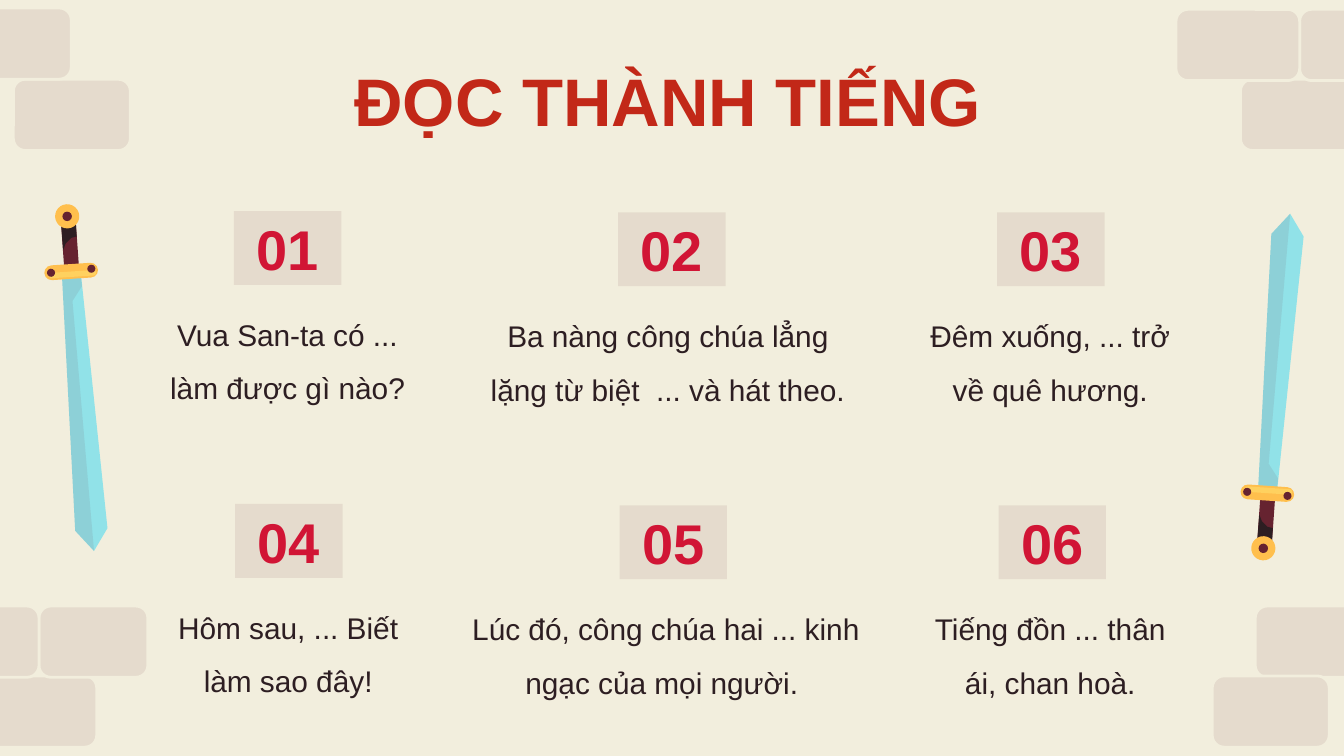
import pptx
import pptx.dml.color
import pptx.enum.shapes
import pptx.enum.text
import pptx.oxml
import pptx.oxml.ns
import pptx.util
from pptx.util import Inches

RGBColor = pptx.dml.color.RGBColor
SHAPE = pptx.enum.shapes.MSO_SHAPE
ANCHOR = pptx.enum.text.MSO_ANCHOR

CREAM = RGBColor(0xF2, 0xEE, 0xDD)
MAROON = RGBColor(0x66, 0x23, 0x30)
DARK = RGBColor(0x2D, 0x1E, 0x22)
CRIMSON = RGBColor(0xD1, 0x15, 0x35)
RED = RGBColor(0xC2, 0x28, 0x18)
BLADE = RGBColor(0x91, 0xE2, 0xE8)
GOLD = RGBColor(0xFF, 0xBF, 0x4D)
LIGHT_GOLD = RGBColor(0xFF, 0xD1, 0x5F)
TINT = 9  # opacity of the maroon tint, in percent

# left, top, width
BRICKS = [
    (0.1, 0.59, 0.87), (-0.19, 0.06, 0.72),
    (9.34, 4.51, 0.87), (9.02, 5.03, 0.87),
    (-0.15, 5.03, 0.87), (0.29, 4.51, 0.81), (-0.63, 4.51, 0.92),
    (9.23, 0.59, 0.87), (9.67, 0.07, 0.81), (8.75, 0.07, 0.92),
]
BRICK_HEIGHT = 0.53

# number left, number top, text left, text width, passage
PASSAGES = [
    (1.74, 1.57, 1.06, 2.16, "Vua San-ta có ... làm được gì nào?"),
    (4.6, 1.58, 3.46, 3.02, "Ba nàng công chúa lẳng lặng từ biệt  ... và hát theo."),
    (7.42, 1.58, 6.73, 2.17, "Đêm xuống, ... trở về quê hương."),
    (1.75, 3.75, 1.06, 2.17, "Hôm sau, ... Biết làm sao đây!"),
    (4.61, 3.76, 3.41, 3.09, "Lúc đó, công chúa hai ... kinh ngạc của mọi người. "),
    (7.43, 3.76, 6.73, 2.17, "Tiếng đồn ... thân ái, chan hoà."),
]
NUMBER_WIDTH, NUMBER_HEIGHT = 0.8, 0.55

# Sword pointing down, on the left side of the slide
GRIP = [(0.56, 1.59), (0.45, 1.6), (0.48, 2.02), (0.59, 2.02)]
BLADE_OUTLINE = [(0.6, 2.01), (0.46, 2.02), (0.56, 3.95), (0.7, 4.1), (0.8, 3.93)]
BLADE_SHADE = [(0.46, 2.02), (0.56, 3.95), (0.7, 4.1), (0.54, 2.24),
               (0.61, 2.13), (0.6, 2.02)]
GRIP_TOP = [(0.56, 1.59), (0.45, 1.6), (0.47, 1.86), (0.49, 1.81),
            (0.53, 1.77), (0.57, 1.76)]
TILT = -3.8


def paint(shape, color, opacity=100):
    shape.shadow.inherit = False
    shape.fill.solid()
    shape.fill.fore_color.rgb = color
    shape.line.fill.background()
    if opacity < 100:
        properties = shape.element.spPr
        color_element = properties.find(".//" + pptx.oxml.ns.qn("a:srgbClr"))
        alpha = pptx.oxml.parse_xml(
            f'<a:alpha {pptx.oxml.ns.nsdecls("a")} val="{opacity * 1000}"/>')
        color_element.append(alpha)


def write_text(shape, text, size, color, bold=False, anchor=ANCHOR.TOP, spacing=None):
    frame = shape.text_frame
    frame.word_wrap = True
    frame.auto_size = pptx.enum.text.MSO_AUTO_SIZE.NONE
    frame.vertical_anchor = anchor
    frame.margin_left = frame.margin_right = Inches(0.1)
    frame.margin_top = frame.margin_bottom = Inches(0.1)
    paragraph = frame.paragraphs[0]
    paragraph.alignment = pptx.enum.text.PP_ALIGN.CENTER
    if spacing:
        paragraph.line_spacing = spacing
    run = paragraph.add_run()
    run.text = text
    run.font.name = "Arial"
    run.font.size = pptx.util.Pt(size)
    run.font.bold = bold
    run.font.color.rgb = color


def add_brick(slide, left, top, width):
    brick = slide.shapes.add_shape(
        SHAPE.ROUNDED_RECTANGLE, Inches(left), Inches(top),
        Inches(width), Inches(BRICK_HEIGHT))
    brick.adjustments[0] = 0.167
    paint(brick, MAROON, TINT)
    brick.line.color.rgb = CREAM
    brick.line.width = pptx.util.Pt(1.5)


def add_title(slide, text):
    title = slide.shapes.title
    title.left, title.top = Inches(-0.04), Inches(0.34)
    title.width, title.height = Inches(10.02), Inches(0.63)
    write_text(title, text, 36, RED, bold=True)


def add_passage(slide, number, left, top, text_left, text_width, text):
    box = slide.shapes.add_shape(
        SHAPE.RECTANGLE, Inches(left), Inches(top),
        Inches(NUMBER_WIDTH), Inches(NUMBER_HEIGHT))
    paint(box, MAROON, TINT)
    write_text(box, f"{number:02}", 30, CRIMSON, bold=True, anchor=ANCHOR.MIDDLE)
    passage = slide.shapes.add_textbox(
        Inches(text_left), Inches(top + NUMBER_HEIGHT),
        Inches(text_width), Inches(0.75))
    write_text(passage, text, 16, DARK, spacing=1.5)


def add_sword(slide, point_up=False):
    """Draw the left sword, or the same one turned upside down on the right."""
    group = slide.shapes.add_group_shape()

    def place(x, y):
        return (x + 8.9, 5.69 - y) if point_up else (x, y)

    def add_outline(points, color, opacity=100):
        corners = [tuple(Inches(value) for value in place(*point)) for point in points]
        builder = group.shapes.build_freeform(*corners[0])
        builder.add_line_segments(corners[1:], close=True)
        paint(builder.convert_to_shape(), color, opacity)

    def add_rounded(kind, center_x, center_y, width, height, color):
        x, y = place(center_x, center_y)
        part = group.shapes.add_shape(
            kind, Inches(x - width / 2), Inches(y - height / 2),
            Inches(width), Inches(height))
        part.rotation = -TILT if point_up else TILT
        if kind == SHAPE.ROUNDED_RECTANGLE:
            part.adjustments[0] = 0.5
        paint(part, color)

    add_outline(GRIP, MAROON)
    add_outline(BLADE_OUTLINE, BLADE)
    add_outline(BLADE_SHADE, MAROON, TINT)
    add_rounded(SHAPE.ROUNDED_RECTANGLE, 0.53, 2.02, 0.4, 0.11, GOLD)
    add_rounded(SHAPE.ROUNDED_RECTANGLE, 0.54, 2.04, 0.35, 0.04, LIGHT_GOLD)
    for x, y in [(0.68, 2), (0.38, 2.03)]:
        add_rounded(SHAPE.OVAL, x, y, 0.06, 0.06, MAROON)
    add_outline(GRIP_TOP, DARK)
    add_rounded(SHAPE.OVAL, 0.5, 1.61, 0.18, 0.18, GOLD)
    add_rounded(SHAPE.OVAL, 0.5, 1.61, 0.07, 0.07, MAROON)


def main():
    presentation = pptx.Presentation()
    presentation.slide_width = Inches(10)
    presentation.slide_height = presentation.slide_width * 9 // 16
    slide = presentation.slides.add_slide(presentation.slide_layouts[5])
    slide.background.fill.solid()
    slide.background.fill.fore_color.rgb = CREAM

    for brick in BRICKS:
        add_brick(slide, *brick)
    add_title(slide, "ĐỌC THÀNH TIẾNG")
    for number, passage in enumerate(PASSAGES, start=1):
        add_passage(slide, number, *passage)
    add_sword(slide, point_up=True)
    add_sword(slide)
    presentation.save("out.pptx")


if __name__ == "__main__":
    main()
